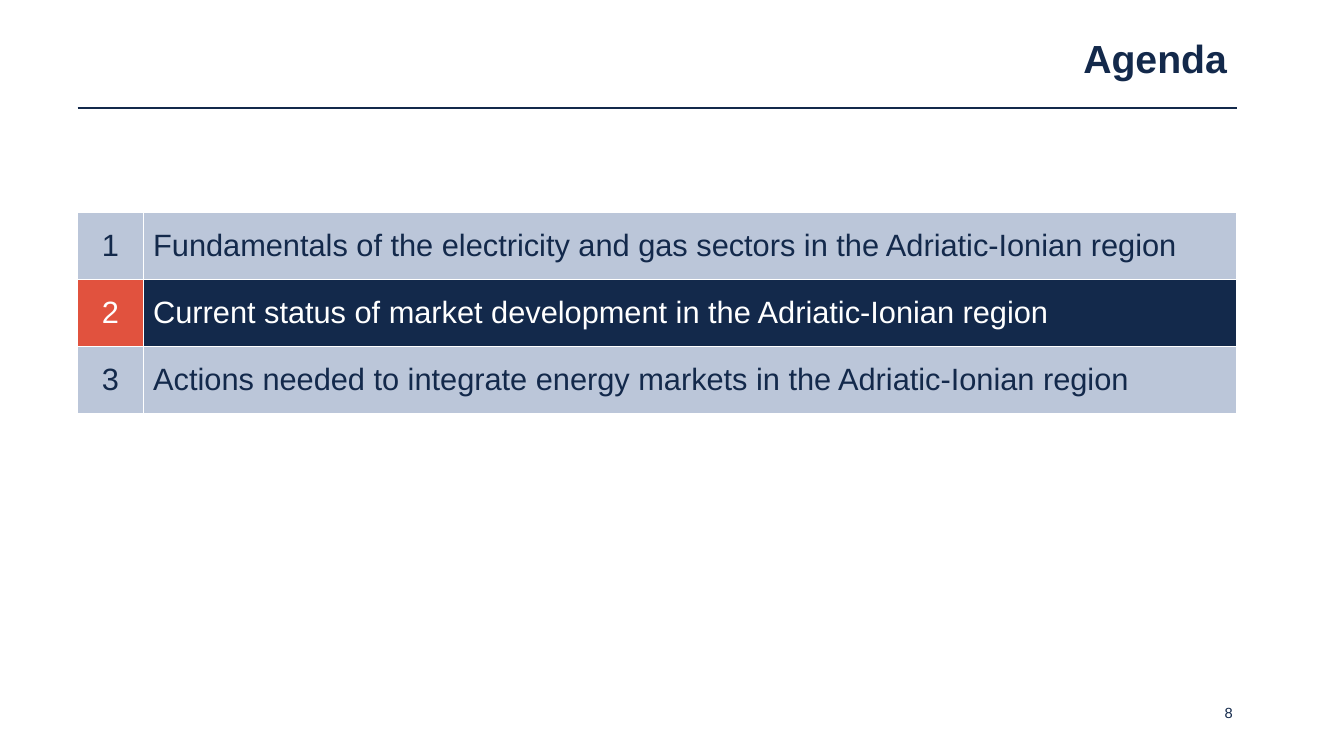
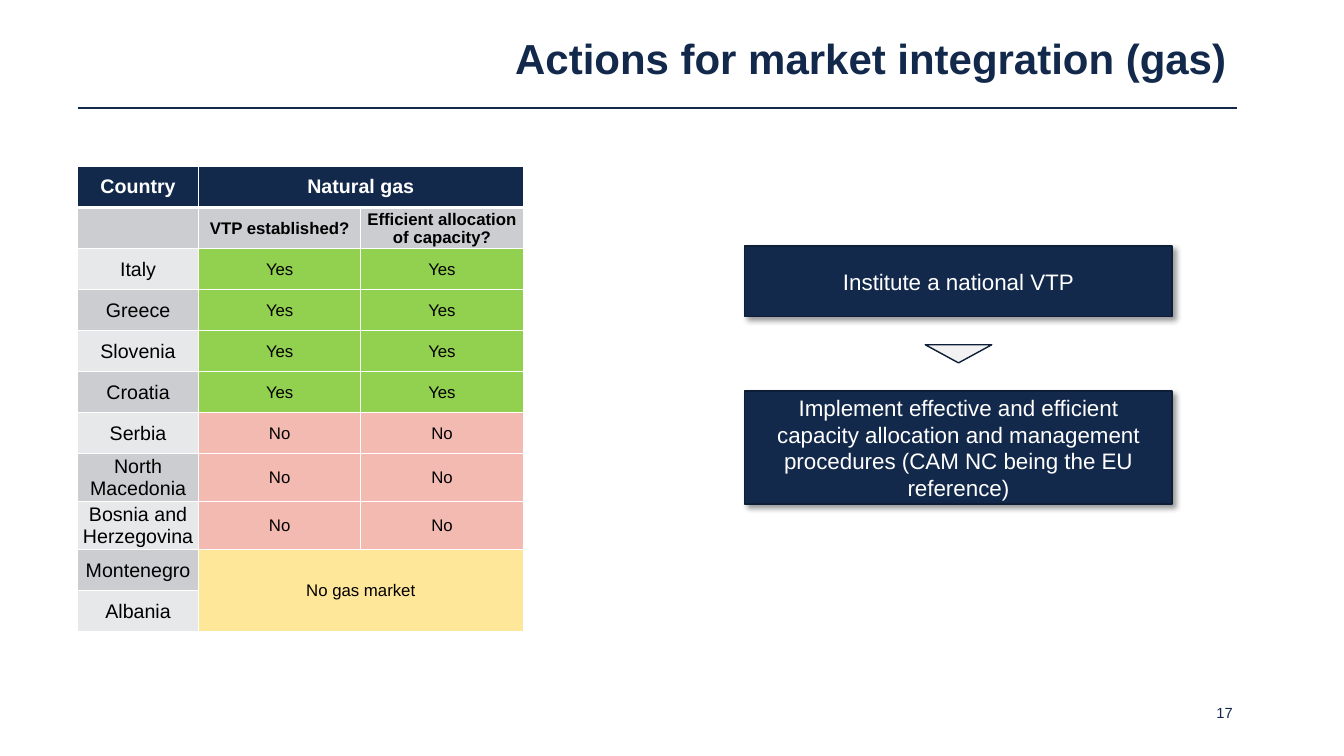
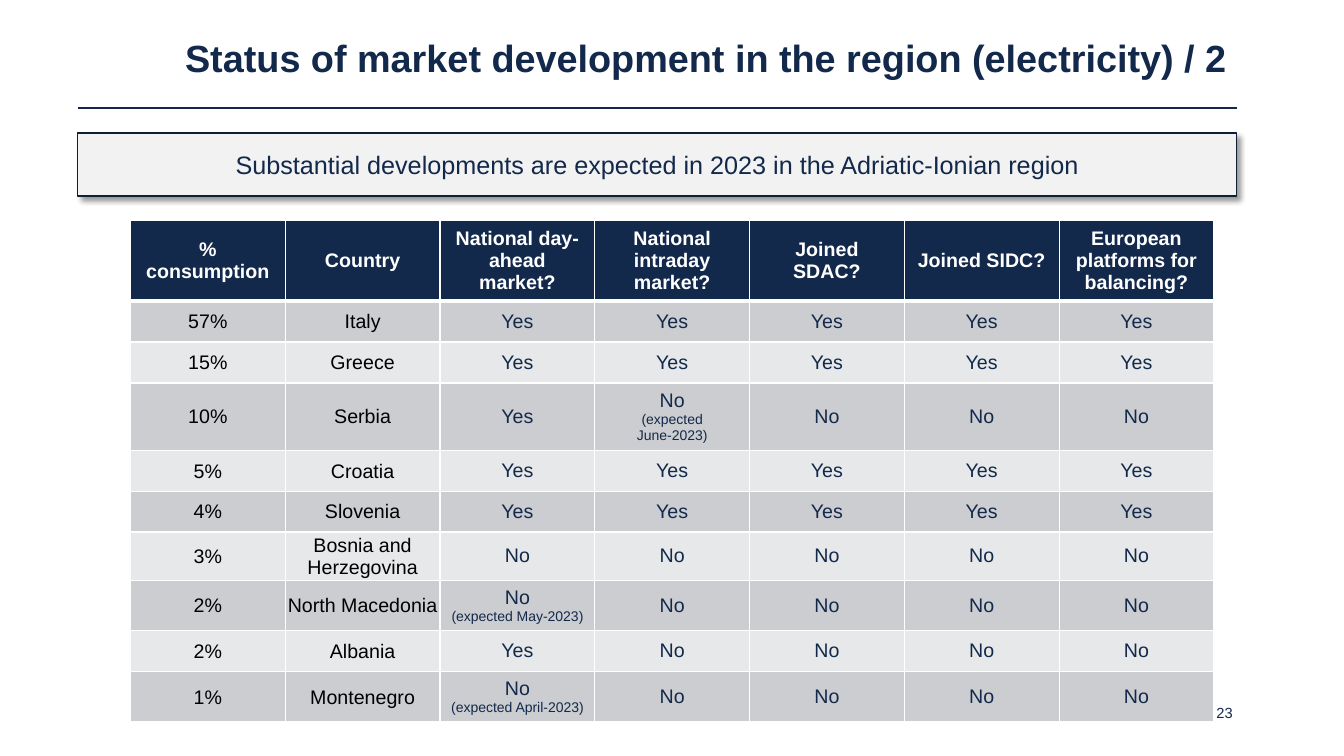
from lxml.etree import SubElement
from pptx import Presentation
from pptx.dml.color import RGBColor
from pptx.enum.shapes import MSO_CONNECTOR, MSO_SHAPE
from pptx.enum.text import MSO_ANCHOR, PP_ALIGN
from pptx.oxml.ns import qn
from pptx.util import Pt

COLORS = {
    "navy": "13294B", "outline": "0E1E37", "white": "FFFFFF", "black": "000000",
    "mist": "BBC6D9", "red": "E1523E", "panel": "F2F2F2",
    "dark_band": "CCCDD0", "light_band": "E7E8E9",
    "Yes": "92D050", "No": "F3BAB2", "No gas market": "FFE799",
}
FONT = "Arial"
LEFT, WIDTH = 55.44, 828
ROW_HEIGHT = 29.2
INSETS = (7.2, 3.6, 7.2, 3.6)
TIGHT = (0.72, 0.72, 0.72, 0)
ROOMY = (7.2, 10.8, 7.2, 10.8)

AGENDA = [
    "Fundamentals of the electricity and gas sectors in the Adriatic-Ionian region",
    "Current status of market development in the Adriatic-Ionian region",
    "Actions needed to integrate energy markets in the Adriatic-Ionian region",
]
CURRENT_ITEM = 2

GAS_ROWS = [
    ("Country", "Natural gas", ""),
    ("", "VTP established?", "Efficient allocation of capacity?"),
    ("Italy", "Yes", "Yes"),
    ("Greece", "Yes", "Yes"),
    ("Slovenia", "Yes", "Yes"),
    ("Croatia", "Yes", "Yes"),
    ("Serbia", "No", "No"),
    ("North Macedonia", "No", "No"),
    ("Bosnia and Herzegovina", "No", "No"),
    ("Montenegro", "No gas market", ""),
    ("Albania", "", ""),
]
GAS_MERGES = [((0, 1), (0, 2)), ((9, 1), (10, 2))]
GAS_ACTIONS = [
    ("Institute a national VTP", 175.68, 50.4),
    ("Implement effective and efficient capacity allocation and management "
     "procedures (CAM NC being the EU reference)", 279.36, 80.64),
]

POWER_MESSAGE = "Substantial developments are expected in 2023 in the Adriatic-Ionian region"
POWER_ROWS = [
    ("% consumption", "Country", "National day-ahead market?", "National intraday market?",
     "Joined SDAC?", "Joined SIDC?", "European platforms for balancing?"),
    ("57%", "Italy", "Yes", "Yes", "Yes", "Yes", "Yes"),
    ("15%", "Greece", "Yes", "Yes", "Yes", "Yes", "Yes"),
    ("10%", "Serbia", "Yes", "No\n(expected June-2023)", "No", "No", "No"),
    ("5%", "Croatia", "Yes", "Yes", "Yes", "Yes", "Yes"),
    ("4%", "Slovenia", "Yes", "Yes", "Yes", "Yes", "Yes"),
    ("3%", "Bosnia and Herzegovina", "No", "No", "No", "No", "No"),
    ("2%", "North Macedonia", "No\n(expected May-2023)", "No", "No", "No", "No"),
    ("2%", "Albania", "Yes", "No", "No", "No", "No"),
    ("1%", "Montenegro", "No\n(expected April-2023)", "No", "No", "No", "No"),
]


def rgb(name):
    return RGBColor.from_string(COLORS[name])


def write(tf, text, size, color, bold=False, align=PP_ALIGN.CENTER, spacing=None, note_size=10):
    tf.word_wrap = True
    for i, line in enumerate(text.split("\n")):
        p = tf.add_paragraph() if i else tf.paragraphs[0]
        p.alignment = align
        if spacing:
            p.line_spacing = spacing
        r = p.add_run()
        r.text = line
        r.font.name = FONT
        r.font.size = Pt(note_size if i else size)
        r.font.bold = bold
        r.font.color.rgb = rgb(color)


def set_insets(box, insets):
    box.margin_left, box.margin_top, box.margin_right, box.margin_bottom = map(Pt, insets)


def add_label(slide, x, y, w, h, text, size, insets=INSETS, anchor=MSO_ANCHOR.TOP, **style):
    tf = slide.shapes.add_textbox(Pt(x), Pt(y), Pt(w), Pt(h)).text_frame
    set_insets(tf, insets)
    tf.vertical_anchor = anchor
    write(tf, text, size, "navy", align=PP_ALIGN.RIGHT, **style)


def add_slide(prs, title, title_size, number):
    slide = prs.slides.add_slide(prs.slide_layouts[6])
    rule = slide.shapes.add_connector(
        MSO_CONNECTOR.STRAIGHT, Pt(LEFT), Pt(77), Pt(LEFT + WIDTH), Pt(77))
    rule.line.color.rgb = rgb("navy")
    rule.line.width = Pt(1.5)
    SubElement(rule._element.spPr, qn("a:effectLst"))
    add_label(slide, LEFT, 20.88, WIDTH, 44.64, title, title_size,
              anchor=MSO_ANCHOR.MIDDLE, bold=True, spacing=0.9)
    add_label(slide, LEFT + WIDTH - 216, 499, 216, 21.6, str(number), 10.5,
              insets=(7.2, 3.6, 2.88, 3.6))
    return slide


def add_box(slide, kind, x, y, w, h, fill):
    sp = slide.shapes.add_shape(kind, Pt(x), Pt(y), Pt(w), Pt(h))
    sp.shadow.inherit = False
    sp.fill.solid()
    sp.fill.fore_color.rgb = rgb(fill)
    sp.line.color.rgb = rgb("outline")
    sp.line.width = Pt(1)
    return sp


def add_card(slide, x, y, w, h, fill, text, size, color):
    sp = add_box(slide, MSO_SHAPE.RECTANGLE, x, y, w, h, fill)
    effects = sp._element.spPr.find(qn("a:effectLst"))
    shadow = SubElement(effects, qn("a:outerShdw"), blurRad=str(Pt(4)), dist=str(Pt(3)),
                        dir="2700000", algn="tl", rotWithShape="0")
    tint = SubElement(shadow, qn("a:srgbClr"), val=COLORS["black"])
    SubElement(tint, qn("a:alpha"), val="40000")
    sp.text_frame.vertical_anchor = MSO_ANCHOR.MIDDLE
    write(sp.text_frame, text, size, color)


def set_borders(cell, top, bottom):
    tcPr = cell._tc.get_or_add_tcPr()
    for i, (side, width) in enumerate((("L", 1), ("R", 1), ("T", top), ("B", bottom))):
        ln = tcPr.makeelement(qn(f"a:ln{side}"), {"w": str(Pt(width))})
        SubElement(SubElement(ln, qn("a:solidFill")), qn("a:srgbClr"), val=COLORS["white"])
        tcPr.insert(i, ln)


def add_grid(slide, x, y, widths, row_height, rows, style, merges=(), header=True):
    table = slide.shapes.add_table(len(rows), len(widths), Pt(x), Pt(y),
                                   Pt(sum(widths)), Pt(row_height * len(rows))).table
    table.first_row = table.horz_banding = False
    for column, width in zip(table.columns, widths):
        column.width = Pt(width)
    for i, row in enumerate(rows):
        table.rows[i].height = Pt(row_height)
        for j, text in enumerate(row):
            cell = table.cell(i, j)
            fill, insets, font = style(i, j, text)
            cell.fill.solid()
            cell.fill.fore_color.rgb = rgb(fill)
            cell.vertical_anchor = MSO_ANCHOR.MIDDLE
            set_insets(cell, insets)
            set_borders(cell, top=3 if header and i == 1 else 1,
                        bottom=3 if header and i == 0 else 1)
            if text:
                write(cell.text_frame, text, **font)
    for first, last in merges:
        table.cell(*first).merge(table.cell(*last))


def band(i):
    return "dark_band" if i % 2 else "light_band"


def agenda_style(i, j, text):
    current = i + 1 == CURRENT_ITEM
    fill = ("red", "navy")[j] if current else "mist"
    return fill, ROOMY, dict(size=22, color="white" if current else "navy",
                             align=PP_ALIGN.LEFT if j else PP_ALIGN.CENTER)


def header_style():
    return "navy", INSETS, dict(size=14, color="white", bold=True)


def gas_style(i, j, text):
    if i == 0:
        return header_style()
    return COLORS.get(text) and text or band(i), TIGHT, dict(
        size=12 if j else 14, color="black", bold=i == 1)


def power_style(i, j, text):
    if i == 0:
        return header_style()
    return band(i), TIGHT if j < 2 else INSETS, dict(size=14, color="black" if j < 2 else "navy")


def build_agenda(prs):
    slide = add_slide(prs, "Agenda", 28, 8)
    rows = [(str(n), item) for n, item in enumerate(AGENDA, 1)]
    add_grid(slide, LEFT, 151.5, [46.8, WIDTH - 46.8], 46.4, rows, agenda_style, header=False)


def build_gas(prs):
    slide = add_slide(prs, "Actions for market integration (gas)", 30, 17)
    add_grid(slide, LEFT, 119, [86.4, 115.92, 115.92], ROW_HEIGHT, GAS_ROWS, gas_style, GAS_MERGES)
    x, w = 532, 305.28
    for text, y, h in GAS_ACTIONS:
        add_card(slide, x, y, w, h, "navy", text, 16, "white")
    (_, y1, h1), (_, y2, _) = GAS_ACTIONS
    arrow_w, arrow_h = 47.52, 12.96
    arrow = add_box(slide, MSO_SHAPE.ISOSCELES_TRIANGLE, x + (w - arrow_w) / 2,
                    (y1 + h1 + y2 - arrow_h) / 2, arrow_w, arrow_h, "panel")
    arrow.rotation = 180


def build_power(prs):
    slide = add_slide(prs, "Status of market development in the region (electricity) / 2", 27, 23)
    add_grid(slide, 93.2, 157.5, [110.57] * 7, ROW_HEIGHT, POWER_ROWS, power_style)
    add_card(slide, LEFT, 95, WIDTH, 45, "panel", POWER_MESSAGE, 18, "navy")


def main():
    prs = Presentation()
    prs.slide_width, prs.slide_height = Pt(960), Pt(540)
    build_agenda(prs)
    build_gas(prs)
    build_power(prs)
    prs.save("out.pptx")


if __name__ == "__main__":
    main()
